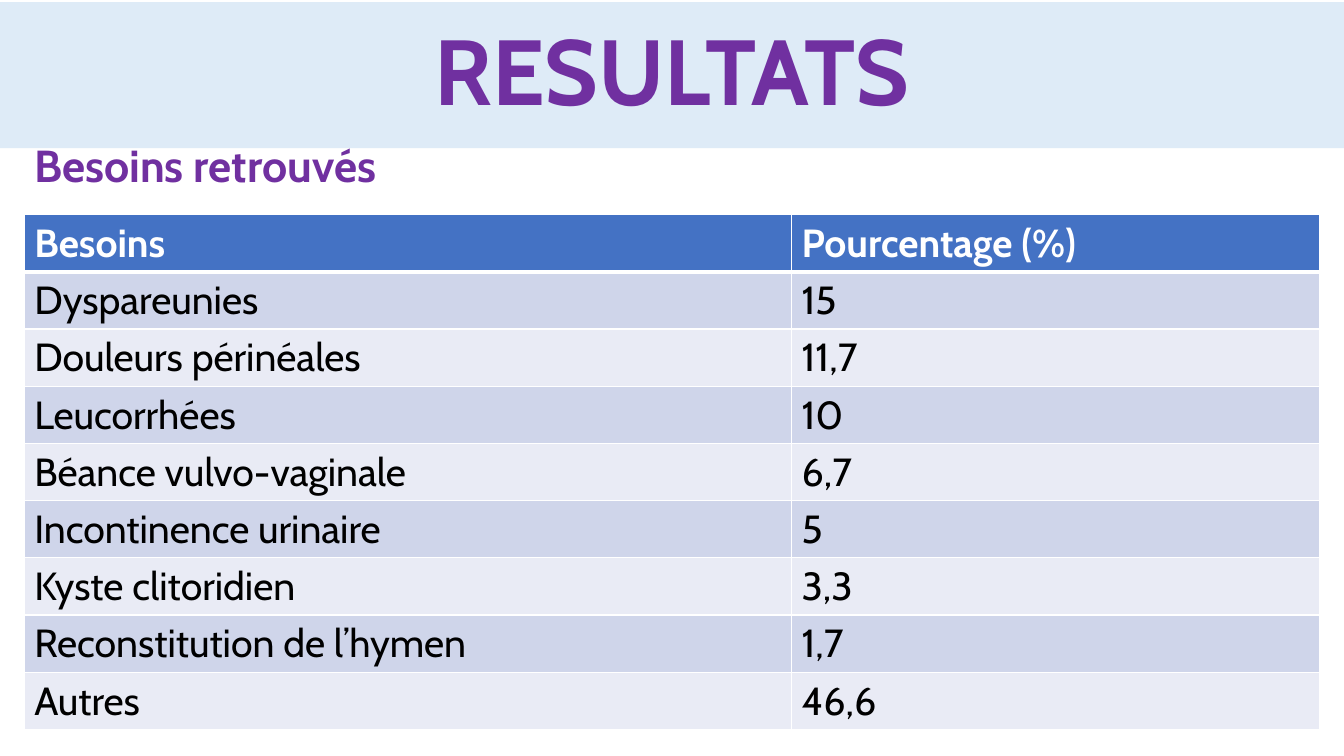
from lxml import etree
from pptx import Presentation
from pptx.dml.color import RGBColor
from pptx.enum import shapes, text
from pptx.oxml import ns
from pptx.util import Inches, Pt

PURPLE = RGBColor(0x70, 0x30, 0xA0)
PALE_BLUE = RGBColor(0xDE, 0xEB, 0xF7)
HEADER_BLUE = RGBColor(0x44, 0x72, 0xC4)
BAND_DARK = RGBColor(0xCF, 0xD5, 0xEA)
BAND_LIGHT = RGBColor(0xE9, 0xEB, 0xF5)
WHITE = RGBColor(0xFF, 0xFF, 0xFF)
BLACK = RGBColor(0, 0, 0)

NEEDS = [
    ("Besoins", "Pourcentage (%)"),
    ("Dyspareunies", "15"),
    ("Douleurs périnéales", "11,7"),
    ("Leucorrhées", "10"),
    ("Béance vulvo-vaginale", "6,7"),
    ("Incontinence urinaire", "5"),
    ("Kyste clitoridien", "3,3"),
    ("Reconstitution de l’hymen", "1,7"),
    ("Autres", "46,6"),
]


class SlideBuilder:
    font_name = "Cabin"

    def __init__(self, slide):
        self.slide = slide

    def set_wording(self, frame, wording, size, color, bold=True):
        frame.text = wording
        font = frame.paragraphs[0].runs[0].font
        font.name = self.font_name
        font.size = Pt(size)
        font.bold = bold
        font.color.rgb = color

    def banner(self, wording, left, top, width, height):
        banner = self.slide.shapes.add_shape(
            shapes.MSO_SHAPE.RECTANGLE,
            Inches(left), Inches(top), Inches(width), Inches(height))
        banner.shadow.inherit = False
        banner.fill.solid()
        banner.fill.fore_color.rgb = PALE_BLUE
        banner.line.fill.background()
        frame = banner.text_frame
        frame.vertical_anchor = text.MSO_ANCHOR.MIDDLE
        self.set_wording(frame, wording, 66, PURPLE)
        frame.paragraphs[0].alignment = text.PP_ALIGN.CENTER
        frame.paragraphs[0].line_spacing = 0.9

    def subtitle(self, wording, left, top, width, height):
        frame = self.slide.shapes.add_textbox(
            Inches(left), Inches(top), Inches(width), Inches(height)).text_frame
        frame.word_wrap = True
        self.set_wording(frame, wording, 32, PURPLE)
        frame.paragraphs[0].line_spacing = 0.9

    def borders(self, cell, bottom, top):
        properties = cell._tc.get_or_add_tcPr()
        for side, points in (("L", 1), ("R", 1), ("T", top), ("B", bottom)):
            line = etree.SubElement(
                properties, ns.qn(f"a:ln{side}"), w=str(Pt(points)))
            fill = etree.SubElement(line, ns.qn("a:solidFill"))
            etree.SubElement(fill, ns.qn("a:srgbClr"), val=str(WHITE))

    def table(self, rows, left, top, column_widths, row_height):
        table = self.slide.shapes.add_table(
            len(rows), len(column_widths), Inches(left), Inches(top),
            Inches(sum(column_widths)), Inches(row_height * len(rows))).table
        for column, width in zip(table.columns, column_widths):
            column.width = Inches(width)
        for row_number, values in enumerate(rows):
            table.rows[row_number].height = Inches(row_height)
            is_header = row_number == 0
            band = BAND_DARK if row_number % 2 else BAND_LIGHT
            for column_number, value in enumerate(values):
                cell = table.cell(row_number, column_number)
                self.set_wording(cell.text_frame, value, 28,
                                 WHITE if is_header else BLACK, is_header)
                self.borders(cell, bottom=3 if is_header else 1,
                             top=3 if row_number == 1 else 1)
                cell.fill.solid()
                cell.fill.fore_color.rgb = HEADER_BLUE if is_header else band


def main():
    deck = Presentation()
    deck.slide_width = Inches(13.33)
    deck.slide_height = Inches(7.5)
    builder = SlideBuilder(deck.slides.add_slide(deck.slide_layouts[6]))
    builder.banner("RESULTATS", 0, 0.02, 13.33, 1.45)
    builder.subtitle("Besoins retrouvés", 0.24, 1.38, 12.84, 5.82)
    builder.table(NEEDS, 0.24, 2.13, (7.61, 5.24), 0.54)
    deck.save("out.pptx")


if __name__ == "__main__":
    main()
